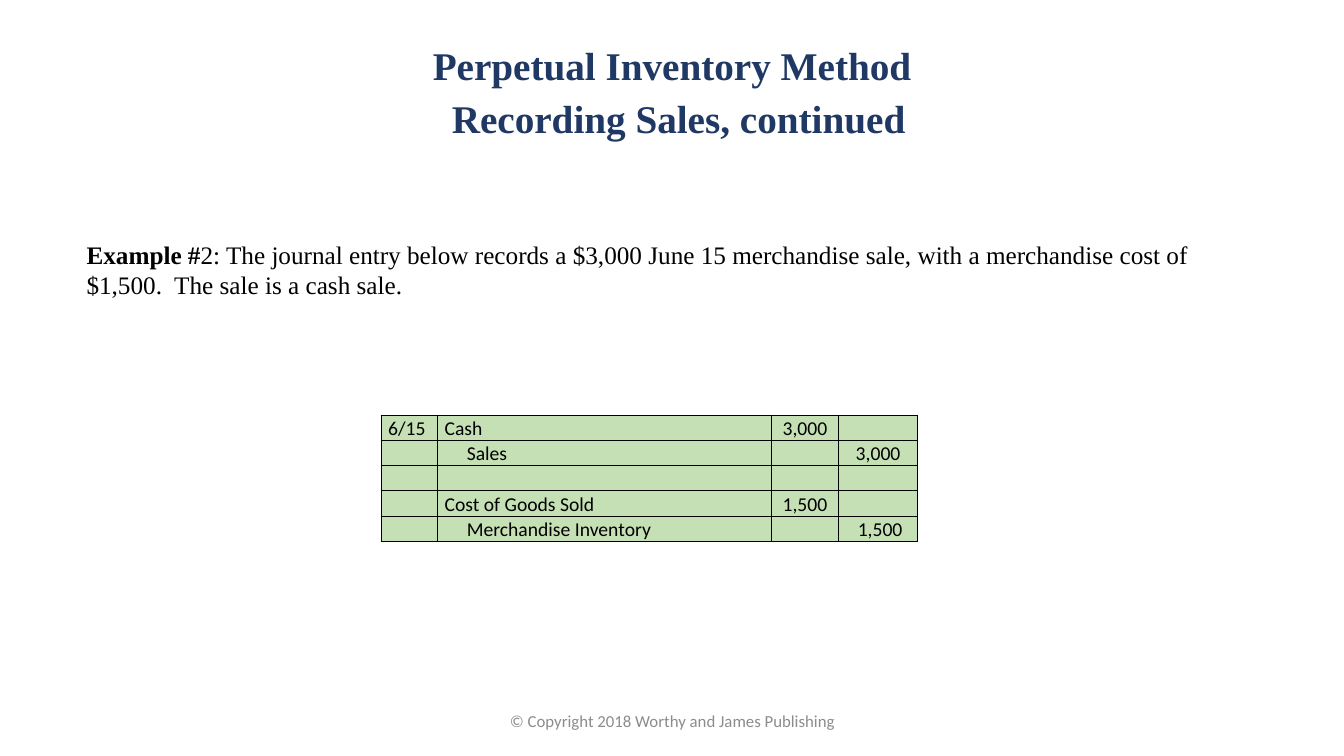
import lxml.etree
import pptx
import pptx.dml.color
import pptx.enum.text
import pptx.oxml.ns
import pptx.util

Inches, Pt = pptx.util.Inches, pptx.util.Pt
RGBColor = pptx.dml.color.RGBColor
ALIGN, ANCHOR = pptx.enum.text.PP_ALIGN, pptx.enum.text.MSO_ANCHOR
qn = pptx.oxml.ns.qn

NAVY = RGBColor(0x20, 0x38, 0x64)
BLACK = RGBColor(0, 0, 0)
GREY = RGBColor(0x8C, 0x8C, 0x8C)
GREEN = RGBColor(0xC5, 0xE0, 0xB4)
SERIF, SANS = "Times New Roman", "Calibri"
COLS = (0.56, 3.31, 0.67, 0.78)
ROW = 0.25
ENTRY = (
    ("6/15", "Cash", "3,000", ""),
    ("", "Sales", "", "3,000"),
    ("", "", "", ""),
    ("", "Cost of Goods Sold", "1,500", ""),
    ("", "Merchandise Inventory", "", "1,500"),
)
SHIFTS = {(1, 1): 0.22, (4, 1): 0.22, (4, 3): 0.04}


def add_run(para, text, size, face, color, bold=False):
    run = para.add_run()
    run.text = text
    font = run.font
    font.size, font.name, font.bold = Pt(size), face, bold
    font.color.rgb = color


def indent(para, left, first=0):
    props = para._p.get_or_add_pPr()
    props.set("marL", str(Inches(left)))
    props.set("indent", str(Inches(first)))


def place(shape, box):
    shape.left, shape.top, shape.width, shape.height = map(Inches, box)


def add_title(slide, box):
    title = slide.shapes.title
    place(title, box)
    frame = title.text_frame
    frame.word_wrap = True
    frame.auto_size = pptx.enum.text.MSO_AUTO_SIZE.NONE
    frame.vertical_anchor = ANCHOR.TOP
    frame.margin_top = Inches(0.08)
    first, second = frame.paragraphs[0], frame.add_paragraph()
    first.space_after = Pt(4)
    indent(second, 0.25, -0.12)
    lines = ("Perpetual Inventory Method", "Recording Sales, continued")
    for para, text in zip((first, second), lines):
        para.alignment = ALIGN.CENTER
        add_run(para, text, 28, SERIF, NAVY, True)


def add_box(slide, box, anchor):
    frame = slide.shapes.add_textbox(*map(Inches, box)).text_frame
    frame.word_wrap = True
    frame.vertical_anchor = anchor
    return frame.paragraphs[0]


def add_example(slide, box):
    para = add_box(slide, box, ANCHOR.TOP)
    indent(para, 0.44)
    add_run(para, "Example #", 18, SERIF, BLACK, True)
    add_run(para, "2: The journal entry below records a $3,000 June 15 merchandise sale, "
            "with a merchandise cost of $1,500.  The sale is a cash sale.", 18, SERIF, BLACK)


def add_footer(slide, box):
    para = add_box(slide, box, ANCHOR.MIDDLE)
    para.alignment = ALIGN.CENTER
    add_run(para, "© Copyright 2018 Worthy and James Publishing", 12, SANS, GREY)


def add_borders(cell):
    props = cell._tc.get_or_add_tcPr()
    for side in ("a:lnL", "a:lnR", "a:lnT", "a:lnB"):
        line = lxml.etree.SubElement(props, qn(side), w=str(Pt(1)))
        fill = lxml.etree.SubElement(line, qn("a:solidFill"))
        lxml.etree.SubElement(fill, qn("a:srgbClr"), val=str(BLACK))


def fill_cell(cell, text, align, shift):
    add_borders(cell)
    cell.fill.solid()
    cell.fill.fore_color.rgb = GREEN
    cell.margin_left = cell.margin_right = Inches(0.07)
    cell.margin_top = cell.margin_bottom = 0
    para = cell.text_frame.paragraphs[0]
    para.alignment = align
    para.line_spacing = 1.07
    indent(para, shift)
    if text:
        add_run(para, text, 14, SANS, BLACK)
    else:
        lxml.etree.SubElement(para._p, qn("a:endParaRPr"), sz="1400")


def add_entry(slide, left, top):
    box = map(Inches, (left, top, sum(COLS), ROW * len(ENTRY)))
    table = slide.shapes.add_table(len(ENTRY), len(COLS), *box).table
    table.first_row = table.horz_banding = False
    for col, width in zip(table.columns, COLS):
        col.width = Inches(width)
    for r, texts in enumerate(ENTRY):
        table.rows[r].height = Inches(ROW)
        for c, text in enumerate(texts):
            align = ALIGN.CENTER if c > 1 else ALIGN.LEFT
            fill_cell(table.cell(r, c), text, align, SHIFTS.get((r, c), 0))


def main():
    deck = pptx.Presentation()
    deck.slide_width, deck.slide_height = Inches(13.33), Inches(7.5)
    slide = deck.slides.add_slide(deck.slide_layouts[5])
    add_footer(slide, (4.42, 6.95, 4.5, 0.4))
    add_title(slide, (3.33, 0.33, 6.67, 1.39))
    add_example(slide, (0.32, 2.32, 12.26, 0.71))
    add_entry(slide, 3.78, 4.12)
    deck.save("out.pptx")


if __name__ == "__main__":
    main()
